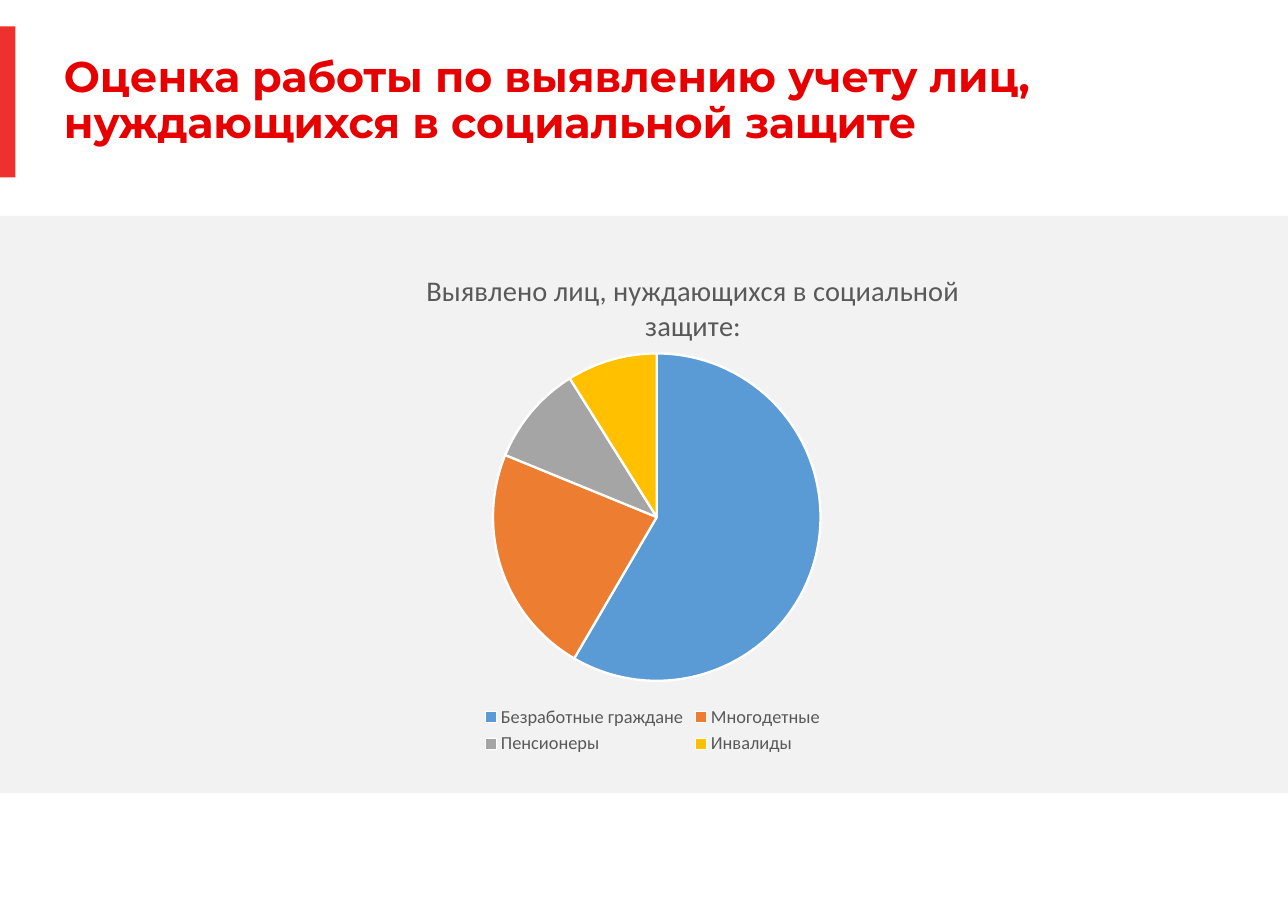
from lxml import etree
from pptx import Presentation, util as u
from pptx.chart.data import CategoryChartData
from pptx.dml.color import RGBColor
from pptx.enum import chart as charts, shapes, text
from pptx.oxml import ns

# Content
HEADING = "Оценка работы по выявлению учету лиц, нуждающихся в социальной защите"
CHART_TITLE = "Выявлено лиц, нуждающихся в социальной защите:"
GROUPS = [
    ("Безработные граждане", 59, "5B9BD5"),
    ("Многодетные", 23, "ED7D31"),
    ("Пенсионеры", 10, "A5A5A5"),
    ("Инвалиды", 9, "FFC000"),
]
WIDTH, HEIGHT = 11.69, 8.27
BLOCKS = [  # left, top, width, height, colour
    (0, 1.96, WIDTH, 5.24, "F2F2F2"),
    (0, 0.24, 0.14, 1.37, "EE312C"),
]
HEADING_BOX = (0.58, 0.5, 10.59, 0.85)
CHART_BOX = (2.3, 2.17, 7.25, 4.72)
# Shares of the chart's size
TITLE_PLACE = {"x": 0.21, "y": 0.05}
PIE_PLACE = {"x": 0.3, "y": 0.22, "w": 0.41, "h": 0.63}


def colour(value):
    return RGBColor.from_string(value)


def inches(box):
    return [u.Inches(length) for length in box]


def set_font(font, name, size, value, bold=False):
    font.name, font.size, font.bold = name, u.Pt(size), bold
    font.color.rgb = colour(value)


def make_layout(place, inner=False):
    layout = etree.Element(ns.qn("c:layout"))
    manual = etree.SubElement(layout, ns.qn("c:manualLayout"))
    settings = [("layoutTarget", "inner")] if inner else []
    settings += [(axis + "Mode", "edge") for axis in "xy"]
    settings += list(place.items())
    for tag, value in settings:
        etree.SubElement(manual, ns.qn("c:" + tag)).set("val", str(value))
    return layout


def place_part(element, layout, index):
    for old in element.findall(ns.qn("c:layout")):
        element.remove(old)
    element.insert(index, layout)


presentation = Presentation()
presentation.slide_width, presentation.slide_height = inches((WIDTH, HEIGHT))
slide = presentation.slides.add_slide(presentation.slide_layouts[6])

# Grey band and red accent
for *box, fill in BLOCKS:
    shape = slide.shapes.add_shape(shapes.MSO_SHAPE.RECTANGLE, *inches(box))
    shape.shadow.inherit = False
    shape.fill.solid()
    shape.fill.fore_color.rgb = colour(fill)
    shape.line.fill.background()

# Heading
frame = slide.shapes.add_textbox(*inches(HEADING_BOX)).text_frame
frame.margin_left = frame.margin_right = frame.margin_top = frame.margin_bottom = 0
frame.word_wrap = True
frame.vertical_anchor = text.MSO_ANCHOR.MIDDLE
frame.text = HEADING
paragraph = frame.paragraphs[0]
paragraph.line_spacing = 0.9
set_font(paragraph.runs[0].font, "Montserrat", 28, "E60000", bold=True)

# Pie chart
names, values, fills = zip(*GROUPS)
data = CategoryChartData()
data.categories = names
data.add_series("Series 1", values)
chart = slide.shapes.add_chart(
    charts.XL_CHART_TYPE.PIE, *inches(CHART_BOX), data).chart
set_font(chart.font, "Calibri", 10, "000000")
plot = chart.plots[0]
plot.vary_by_categories = True
for index, fill in enumerate(fills):
    point = plot.series[0].points[index].format
    point.fill.solid()
    point.fill.fore_color.rgb = colour(fill)
    point.line.color.rgb = colour("FFFFFF")
    point.line.width = u.Pt(1.5)

# Chart title and legend
title = chart.chart_title
title.text_frame.text = CHART_TITLE
title_paragraph = title.text_frame.paragraphs[0]
title_paragraph.alignment = text.PP_ALIGN.CENTER
set_font(title_paragraph.runs[0].font, "Calibri", 18.6, "595959")
title.include_in_layout = False
chart.has_legend = True
chart.legend.position = charts.XL_LEGEND_POSITION.BOTTOM
chart.legend.include_in_layout = False
set_font(chart.legend.font, "Calibri", 12, "595959")

# Places of the title and the pie inside the chart
chart_element = chart.element.find(ns.qn("c:chart"))
place_part(chart_element.find(ns.qn("c:title")), make_layout(TITLE_PLACE), 1)
place_part(chart_element.find(ns.qn("c:plotArea")), make_layout(PIE_PLACE, inner=True), 0)

presentation.save("out.pptx")
